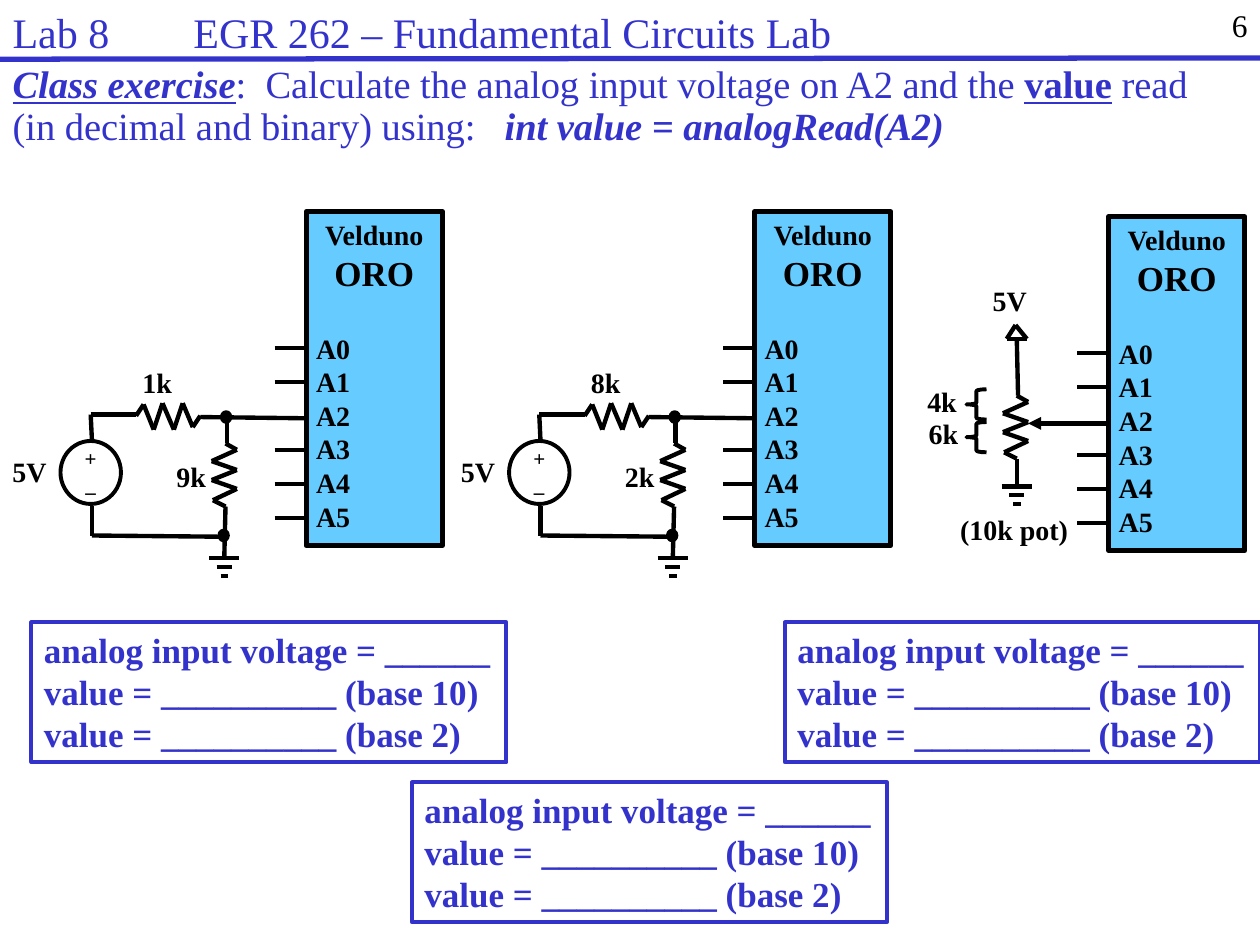
import itertools

import lxml.etree
import pptx
import pptx.dml.color
import pptx.enum.shapes
import pptx.enum.text
import pptx.oxml.ns
import pptx.util

PX = 9144
FONT = "Times New Roman"
BLUE, BLACK, SKY = "3333CC", "000000", "66CCFF"
ALIGN = pptx.enum.text.PP_ALIGN
SHAPE = pptx.enum.shapes.MSO_SHAPE
HORIZONTAL = [(0, 0), (6, -9), (14, 11), (21, -10), (30, 11), (37, -10), (45, 9), (51, 0)]
VERTICAL = [(0, 0), (9, 5), (-11, 14), (9, 21), (-11, 29), (9, 36), (-10, 45), (0, 50)]


def px(*lengths):
    return [length * PX for length in lengths]


def color(value):
    return pptx.dml.color.RGBColor.from_string(value)


def shift(box, points):
    return [(box[0] + x, box[1] + y) for x, y in points]


def add_xml(parent, tag, **attributes):
    return lxml.etree.SubElement(parent, pptx.oxml.ns.qn(tag), attributes)


def add_span(para, text, size, value=BLACK, bold=False, italic=False, underline=False, gap=0):
    span = para.add_run()
    span.text = text
    font = span.font
    font.name, font.size = FONT, pptx.util.Pt(size)
    font.bold, font.italic, font.underline = bold, italic, underline
    font.color.rgb = color(value)
    if gap:
        span._r.get_or_add_rPr().set("spc", str(gap * 100))


def write(shape, lines, value=BLACK, bold=True, align=ALIGN.LEFT, inset=(10, 5), wrap=False):
    frame = shape.text_frame
    frame.word_wrap = wrap
    frame.vertical_anchor = pptx.enum.text.MSO_ANCHOR.TOP
    frame.margin_left = frame.margin_right = inset[0] * PX
    frame.margin_top = frame.margin_bottom = inset[1] * PX
    for index, (text, size) in enumerate(lines):
        para = frame.add_paragraph() if index else frame.paragraphs[0]
        para.alignment = align
        add_span(para, text, size, value, bold)


def label(page, box, lines, **options):
    write(page.shapes.add_textbox(*px(*box)), lines, **options)


def outline(page, kind, box, width, value=BLACK, fill=None):
    shape = page.shapes.add_shape(kind, *px(*box))
    shape.shadow.inherit = False
    if fill:
        shape.fill.solid()
        shape.fill.fore_color.rgb = color(fill)
    else:
        shape.fill.background()
    shape.line.color.rgb = color(value)
    shape.line.width = pptx.util.Pt(width)
    return shape


def trace(page, box, points, value=BLACK, width=2.5, arrow=False):
    for start, end in itertools.pairwise(shift(box, points)):
        wire = page.shapes.add_connector(
            pptx.enum.shapes.MSO_CONNECTOR.STRAIGHT, *px(*start, *end))
        wire.line.color.rgb = color(value)
        wire.line.width = pptx.util.Pt(width)
        if arrow:
            add_xml(wire.line._get_or_add_ln(), "a:headEnd", type="triangle")
        add_xml(wire._element.spPr, "a:effectLst")


def ground(page, box):
    for row, half in enumerate((12, 6, 3)):
        trace(page, box, [(-half, 7 * row), (half, 7 * row)])


def board(page, box, wired_pin=2):
    left, top = box
    body = outline(page, SHAPE.RECTANGLE, (left, top, 108, 265), 3, fill=SKY)
    write(body, [("Velduno", 16), ("ORO", 20)], align=ALIGN.CENTER, wrap=True)
    label(page, (left - 2, top + 90, 58, 165), [(f"A{pin}", 16) for pin in range(6)], wrap=True)
    for pin in range(6):
        if pin != wired_pin:
            trace(page, box, [(-25, 108 + 27 * pin), (0, 108 + 27 * pin)])


def divider_circuit(page, box, series, shunt):
    left, top = box
    board(page, (left + 243, top))
    trace(page, shift(box, [(108, 162)])[0], HORIZONTAL)
    trace(page, shift(box, [(179, 184)])[0], VERTICAL)
    trace(page, box, [(73, 182), (72, 161), (108, 161)])
    trace(page, box, [(159, 163), (243, 164)])
    trace(page, box, [(180, 163), (180, 184)])
    trace(page, box, [(179, 234), (178, 275)])
    trace(page, box, [(73, 234), (73, 257), (177, 258)])
    ground(page, (left + 178, top + 275))
    outline(page, SHAPE.OVAL, (left + 48, top + 182, 48, 50), 2.25)
    for x, y in shift(box, [(176, 159), (174, 253)]):
        outline(page, SHAPE.OVAL, (x, y, 7, 8), 2, fill=BLACK)
    label(page, (left, top + 188, 48, 37), [("5V", 16)])
    label(page, (left + 113, top + 122, 24, 27), [(series, 16)], inset=(0, 0))
    label(page, (left + 140, top + 197, 24, 27), [(shunt, 16)], inset=(0, 0))
    label(page, (left + 67, top + 186, 10, 40), [("+", 12), ("_", 12)],
          align=ALIGN.CENTER, inset=(0, 0))


def pot_circuit(page, box):
    left, top = box
    board(page, (left + 144, top))
    trace(page, box, [(80, 164), (144, 164)], arrow=True)
    trace(page, shift(box, [(71, 142)])[0], VERTICAL)
    trace(page, box, [(71, 192), (71, 214)])
    ground(page, (left + 71, top + 214))
    trace(page, box, [(63, 97), (79, 97), (70, 86), (63, 97)])
    trace(page, box, [(71, 97), (72, 142)])
    for y in (137, 163):
        outline(page, SHAPE.LEFT_BRACE, (left + 31, top + y, 16, 24), 2.25)
    label(page, (left + 42, top + 48, 48, 37), [("5V", 16)])
    for text, x, y, width in (("4k", 0, 133, 24), ("6k", 1, 159, 24), ("(10k pot)", 26, 235, 87)):
        label(page, (left + x, top + y, width, 27), [(text, 16)], inset=(0, 0))


def answer_box(page, box):
    shape = outline(page, SHAPE.RECTANGLE, box, 2.25, BLUE)
    lines = ("analog input voltage = ______", "value = __________ (base 10)",
             "value = __________ (base 2)")
    write(shape, [(line, 20) for line in lines], BLUE)


def fill_placeholder(holder, box, spans, size, spacing):
    holder.left, holder.top, holder.width, holder.height = px(*box)
    write(holder, [], wrap=True)
    holder.text_frame.auto_size = pptx.enum.text.MSO_AUTO_SIZE.NONE
    para = holder.text_frame.paragraphs[0]
    para.alignment = ALIGN.LEFT
    para.line_spacing = spacing
    para.space_before = pptx.util.Pt(3)
    properties = para._p.get_or_add_pPr()
    properties.set("marL", "0")
    properties.set("indent", "0")
    add_xml(properties, "a:buNone")
    for text, style in spans:
        add_span(para, text, size, BLUE, **style)


def heading(page, box):
    left, top, width = box
    title, body = page.placeholders
    fill_placeholder(title, (left, top, 976, 43), [
        ("Lab 8", {}),
        (" ", dict(gap=42)),
        ("EGR 262 – Fundamental Circuits Lab", {}),
    ], 24, 1.0)
    fill_placeholder(body, (left, top + 47, 985, 77), [
        ("Class exercise", dict(bold=True, italic=True, underline=True)),
        (":", {}),
        (" ", dict(gap=5.5)),
        ("Calculate the analog input voltage on A2 and the ", {}),
        ("value", dict(bold=True, underline=True)),
        (" read (in decimal and binary) using:", {}),
        (" ", dict(gap=11)),
        ("int value = analogRead(A2)", dict(bold=True, italic=True)),
    ], 22, 0.9)
    label(page, (left + width - 208, top, 208, 50), [("6", 18)],
          bold=False, align=ALIGN.RIGHT, wrap=True)
    trace(page, (left, top), [(0, 47), (width, 46)], BLUE, 3)


def main():
    deck = pptx.Presentation()
    deck.slide_width, deck.slide_height = px(1000, 750)
    page = deck.slides.add_slide(deck.slide_layouts[1])
    heading(page, (0, 0, 1000))
    divider_circuit(page, (0, 168), "1k", "9k")
    divider_circuit(page, (356, 168), "8k", "2k")
    pot_circuit(page, (736, 172))
    for left, top in ((25, 494), (327, 621), (623, 494)):
        answer_box(page, (left, top, 377, 111))
    deck.save("out.pptx")


if __name__ == "__main__":
    main()
